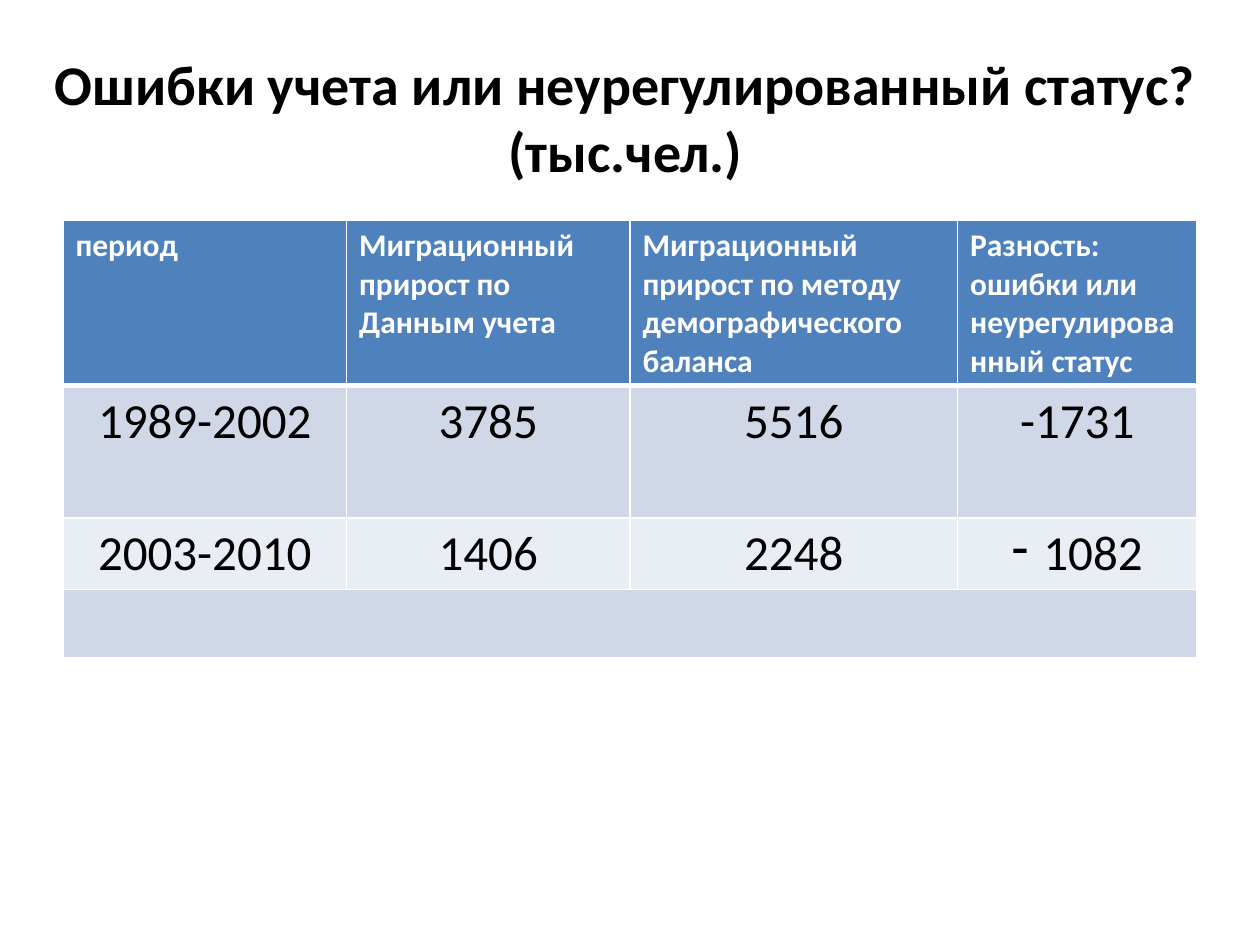
import pptx
import pptx.util
import pptx.dml.color
import pptx.enum.text
import pptx.oxml
import pptx.oxml.ns

Inches = pptx.util.Inches
Align = pptx.enum.text.PP_ALIGN
Anchor = pptx.enum.text.MSO_ANCHOR

HEAD = ["период",
        "Миграционный прирост по\nДанным учета",
        "Миграционный прирост по методу демографического баланса",
        "Разность:\nошибки или неурегулированный статус"]
ROWS = [["1989-2002", "3785", "5516", "-1731"],
        ["2003-2010", "1406", "2248", "1082"]]
WIDTHS = [2.25, 2.25, 2.6, 1.9]
HEIGHTS = [1.31, 1.05, 0.57, 0.54]
FILLS = ["4F81BD", "D0D8E8", "E9EDF4", "D0D8E8"]


def color(code):
    return pptx.dml.color.RGBColor.from_string(code)


def write(frame, text, size=18, bold=False, ink="000000", align=Align.LEFT):
    frame.word_wrap = True
    for i, line in enumerate(text.split("\n")):
        para = frame.paragraphs[0] if i == 0 else frame.add_paragraph()
        para.alignment = align
        run = para.add_run()
        run.text = line
        run.font.name = "Calibri"
        run.font.size = pptx.util.Pt(size)
        run.font.bold = bold
        run.font.color.rgb = color(ink)


def border(cell, low):
    # White rules; borders must precede the fill in the cell properties
    props = cell._tc.get_or_add_tcPr()
    space = pptx.oxml.ns.nsdecls("a")
    for i, (side, width) in enumerate(zip("LRTB", [1, 1, 1, low])):
        props.insert(i, pptx.oxml.parse_xml(
            f'<a:ln{side} {space} w="{pptx.util.Pt(width)}"><a:solidFill>'
            f'<a:srgbClr val="FFFFFF"/></a:solidFill></a:ln{side}>'))


def dash(para):
    # Hanging dash bullet
    props = para._p.get_or_add_pPr()
    props.set("marL", str(Inches(0.25)))
    props.set("indent", str(-Inches(0.25)))
    space = pptx.oxml.ns.nsdecls("a")
    props.append(pptx.oxml.parse_xml(f'<a:buChar {space} char="-"/>'))


def add_title(slide, left, top, width, height):
    frame = slide.shapes.add_textbox(left, top, width, height).text_frame
    frame.vertical_anchor = Anchor.MIDDLE
    write(frame, "Ошибки учета или неурегулированный статус? (тыс.чел.)",
          size=32, bold=True, align=Align.CENTER)


def add_grid(slide, left, top, width, height):
    table = slide.shapes.add_table(
        len(HEIGHTS), len(WIDTHS), left, top, width, height).table
    for col, size in zip(table.columns, WIDTHS):
        col.width = Inches(size)
    for row, size, fill in zip(table.rows, HEIGHTS, FILLS):
        row.height = Inches(size)
        for cell in row.cells:
            cell.fill.solid()
            cell.fill.fore_color.rgb = color(fill)
            border(cell, 3 if fill == FILLS[0] else 1)

    # Header, figures and the merged last row
    for c, text in enumerate(HEAD):
        write(table.cell(0, c).text_frame, text, bold=True, ink="FFFFFF")
    for r, row in enumerate(ROWS, 1):
        for c, text in enumerate(row):
            write(table.cell(r, c).text_frame, text, size=28,
                  align=Align.CENTER)
    dash(table.cell(2, 3).text_frame.paragraphs[0])
    table.cell(3, 0).merge(table.cell(3, 3))


def main():
    deck = pptx.Presentation()
    deck.slide_width, deck.slide_height = Inches(10), Inches(7.5)
    slide = deck.slides.add_slide(deck.slide_layouts[6])
    add_title(slide, Inches(0.2), Inches(0.3), Inches(9.53), Inches(1.25))
    add_grid(slide, Inches(0.5), Inches(1.75),
             Inches(sum(WIDTHS)), Inches(sum(HEIGHTS)))
    deck.save("out.pptx")


if __name__ == "__main__":
    main()
